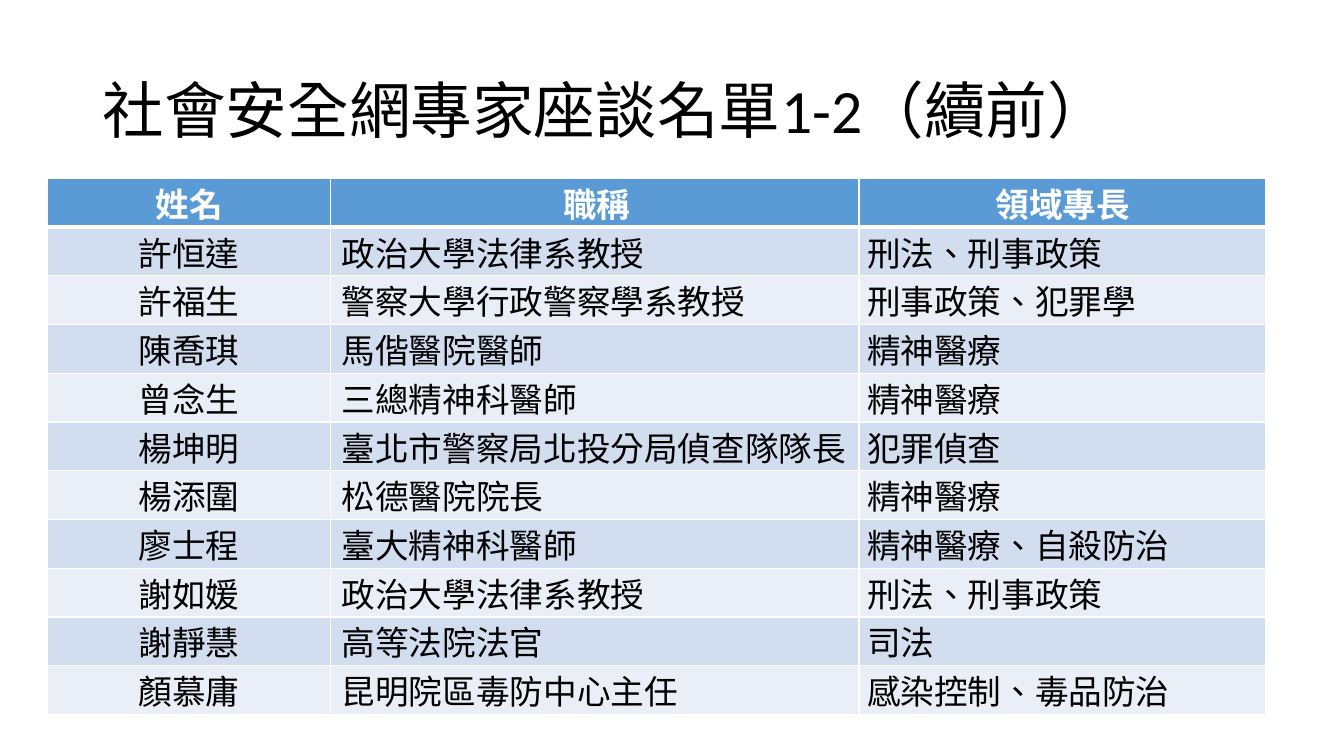
from lxml import etree
from pptx import Presentation
from pptx.dml.color import RGBColor
from pptx.enum import lang, text
from pptx.oxml import ns
from pptx.util import Inches, Pt

BLACK = RGBColor(0x00, 0x00, 0x00)
WHITE = RGBColor(0xFF, 0xFF, 0xFF)
HEADER_BLUE = RGBColor(0x5B, 0x9B, 0xD5)
BAND_DARK = RGBColor(0xD2, 0xDE, 0xEF)
BAND_LIGHT = RGBColor(0xEA, 0xEF, 0xF7)
CJK_FONT = "Noto Sans CJK SC"

HEADINGS = ("姓名", "職稱", "領域專長")
EXPERTS = [
    ("許恒達", "政治大學法律系教授", "刑法、刑事政策"),
    ("許福生", "警察大學行政警察學系教授", "刑事政策、犯罪學"),
    ("陳喬琪", "馬偕醫院醫師", "精神醫療"),
    ("曾念生", "三總精神科醫師", "精神醫療"),
    ("楊坤明", "臺北市警察局北投分局偵查隊隊長", "犯罪偵查"),
    ("楊添圍", "松德醫院院長", "精神醫療"),
    ("廖士程", "臺大精神科醫師", "精神醫療、自殺防治"),
    ("謝如媛", "政治大學法律系教授", "刑法、刑事政策"),
    ("謝靜慧", "高等法院法官", "司法"),
    ("顏慕庸", "昆明院區毒防中心主任", "感染控制、毒品防治"),
]
COLUMN_WIDTHS = (2.81, 5.24, 4.03)
COLUMN_INDENTS = (0, 0.04, 0.01)
TABLE_HEIGHT = 5.32


def format_run(run, latin_font, size, color, bold=False):
    run.font.name = latin_font
    run.font.size = Pt(size)
    run.font.bold = bold
    run.font.color.rgb = color
    run.font.language_id = lang.MSO_LANGUAGE_ID.TRADITIONAL_CHINESE
    east_asian = etree.Element(ns.qn("a:ea"), typeface=CJK_FONT)
    run.font._element.find(ns.qn("a:latin")).addnext(east_asian)


def add_border(cell, side, points):
    properties = cell._tc.get_or_add_tcPr()
    line = etree.SubElement(properties, ns.qn(f"a:ln{side}"), w=str(Pt(points)))
    fill = etree.SubElement(line, ns.qn("a:solidFill"))
    etree.SubElement(fill, ns.qn("a:srgbClr"), val=str(WHITE))


presentation = Presentation()
presentation.slide_width = Inches(13.33)
presentation.slide_height = Inches(7.5)
slide = presentation.slides.add_slide(presentation.slide_layouts[6])

# Title
title = slide.shapes.add_textbox(Inches(0.92), Inches(0.4), Inches(11.5), Inches(1.45))
title_frame = title.text_frame
title_frame.word_wrap = True
title_frame.vertical_anchor = text.MSO_ANCHOR.MIDDLE
title_frame.text = "社會安全網專家座談名單1-2（續前）"
title_paragraph = title_frame.paragraphs[0]
title_paragraph.line_spacing = 0.9
format_run(title_paragraph.runs[0], "Calibri", 44, BLACK)

# Table grid, with rows of equal height
rows = [HEADINGS, *EXPERTS]
table = slide.shapes.add_table(
    len(rows), len(HEADINGS), Inches(0.47), Inches(1.77),
    Inches(sum(COLUMN_WIDTHS)), Inches(TABLE_HEIGHT),
).table
for column, width in zip(table.columns, COLUMN_WIDTHS):
    column.width = Inches(width)

# Table cells
for row_index, row in enumerate(rows):
    is_header = row_index == 0
    if is_header:
        fill_color = HEADER_BLUE
    else:
        fill_color = BAND_DARK if row_index % 2 else BAND_LIGHT

    for column_index, value in enumerate(row):
        cell = table.cell(row_index, column_index)
        cell.margin_left = cell.margin_right = Inches(0.07)
        cell.margin_top = cell.margin_bottom = 0
        add_border(cell, "L", 1)
        add_border(cell, "R", 1)
        add_border(cell, "T", 3 if row_index == 1 else 1)
        add_border(cell, "B", 3 if is_header else 1)
        cell.fill.solid()
        cell.fill.fore_color.rgb = fill_color

        cell.text_frame.text = value
        paragraph = cell.text_frame.paragraphs[0]
        centred = is_header or column_index == 0
        paragraph.alignment = text.PP_ALIGN.CENTER if centred else text.PP_ALIGN.LEFT
        indent = Inches(COLUMN_INDENTS[column_index])
        paragraph._p.get_or_add_pPr().set("marL", str(indent))
        format_run(paragraph.runs[0], CJK_FONT, 24, WHITE if is_header else BLACK, is_header)

presentation.save("out.pptx")
